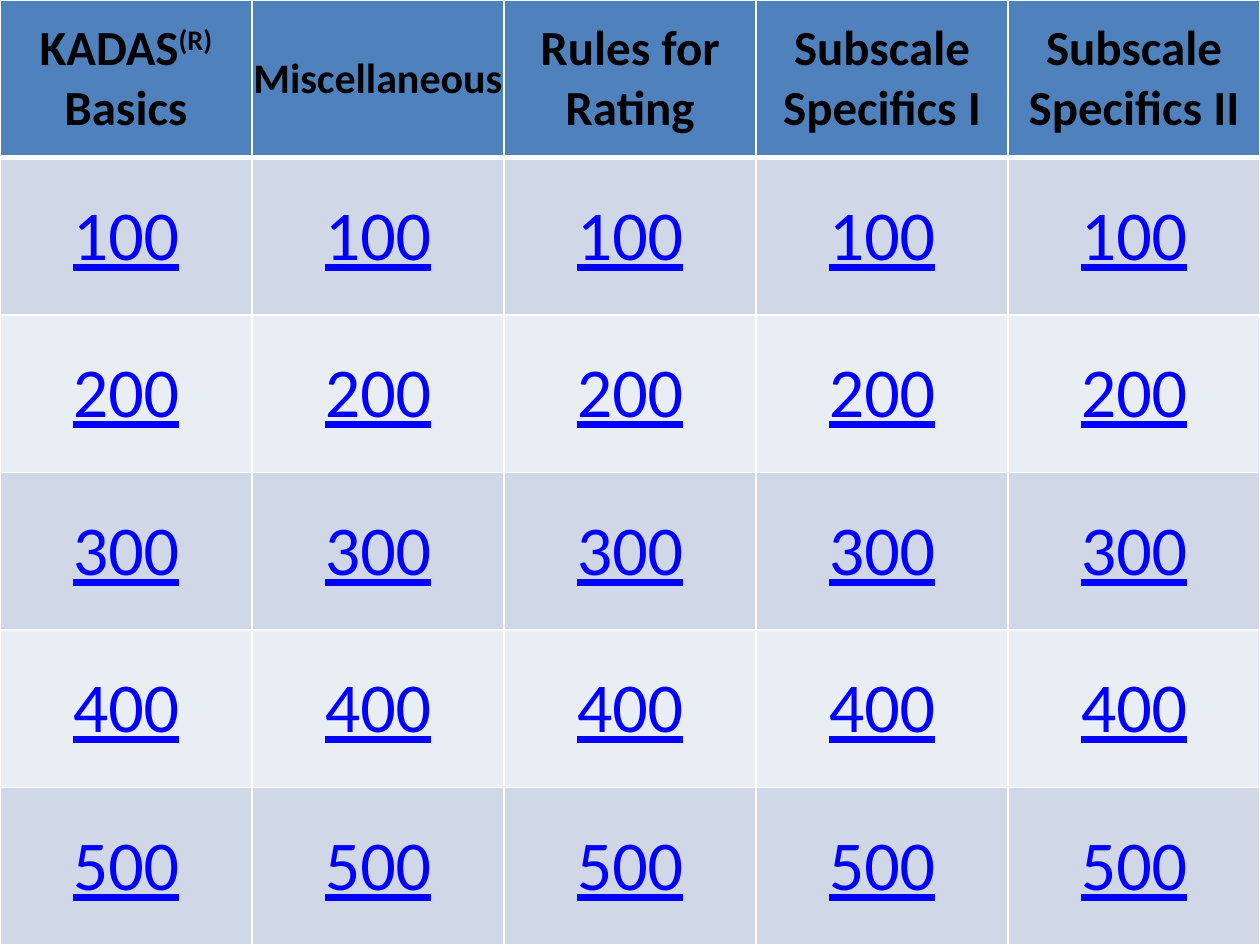
"""Build a quiz board slide: five categories with five point values each."""
from dataclasses import dataclass

from lxml import etree
from pptx import Presentation
from pptx.dml.color import RGBColor
from pptx.enum.text import MSO_ANCHOR, PP_ALIGN
from pptx.oxml import parse_xml
from pptx.oxml.ns import nsdecls, qn
from pptx.util import Pt

CENTER = PP_ALIGN.CENTER
MIDDLE = MSO_ANCHOR.MIDDLE


@dataclass(frozen=True)
class Theme:
    font: str = "Calibri"
    header_fill: str = "4F81BD"
    band_fills: tuple = ("D0D8E8", "E9EDF4")
    header_text: str = "000000"
    value_text: str = "0000FF"
    border: str = "FFFFFF"
    background: tuple = ("FFFBE5", "B0AA8B")
    header_size: int = 28
    small_header_size: int = 24
    value_size: int = 40
    thin_line: int = 1
    thick_line: int = 3


theme = Theme()
WIDTH, HEIGHT = 720, 540
CATEGORIES = [
    [("KADAS", 0), ("(R)", 30000), (" Basics", 0)],
    [("Miscellaneous", 0)],
    [("Rules for Rating", 0)],
    [("Subscale Specifics I", 0)],
    [("Subscale Specifics II", 0)],
]
VALUES = [100, 200, 300, 400, 500]


def style_cell(cell, fill, top, bottom):
    properties = cell._tc.get_or_add_tcPr()
    borders = {"lnL": theme.thin_line, "lnR": theme.thin_line, "lnT": top, "lnB": bottom}
    for tag, width in borders.items():
        properties.append(parse_xml(
            f'<a:{tag} {nsdecls("a")} w="{Pt(width)}"><a:solidFill>'
            f'<a:srgbClr val="{theme.border}"/></a:solidFill></a:{tag}>'))
    cell.fill.solid()
    cell.fill.fore_color.rgb = RGBColor.from_string(fill)
    cell.vertical_anchor = MIDDLE
    cell.text_frame.paragraphs[0].alignment = CENTER


def add_run(cell, text, size, color):
    run = cell.text_frame.paragraphs[0].add_run()
    run.text = text
    run.font.name = theme.font
    run.font.size = Pt(size)
    run.font.color.rgb = RGBColor.from_string(color)
    return run


presentation = Presentation()
presentation.slide_width = Pt(WIDTH)
presentation.slide_height = Pt(HEIGHT)
slide = presentation.slides.add_slide(presentation.slide_layouts[6])

background_fill = slide.background.fill
background_fill.gradient()
for position, (stop, color) in enumerate(zip(background_fill.gradient_stops, theme.background)):
    stop.position = position
    stop.color.rgb = RGBColor.from_string(color)
gradient = next(slide.element.iter(qn("a:gradFill")))
gradient.remove(gradient.find(qn("a:lin")))
circle = etree.SubElement(gradient, qn("a:path"), {"path": "circle"})
etree.SubElement(circle, qn("a:fillToRect"), {side: "50000" for side in "ltrb"})

row_count, column_count = len(VALUES) + 1, len(CATEGORIES)
board = slide.shapes.add_table(row_count, column_count, 0, 0, Pt(WIDTH), Pt(HEIGHT)).table
for column in board.columns:
    column.width = Pt(WIDTH / column_count)
for row in board.rows:
    row.height = Pt(HEIGHT / row_count)

for column_index, category in enumerate(CATEGORIES):
    header = board.cell(0, column_index)
    style_cell(header, theme.header_fill, theme.thin_line, theme.thick_line)
    header.margin_left = header.margin_right = header.margin_top = header.margin_bottom = 0
    size = theme.small_header_size if category[0][0] == "Miscellaneous" else theme.header_size
    for text, baseline in category:
        run = add_run(header, text, size, theme.header_text)
        run.font.bold = True
        if baseline:
            run.font._element.set("baseline", str(baseline))

    for value_index, value in enumerate(VALUES):
        cell = board.cell(value_index + 1, column_index)
        top = theme.thin_line if value_index else theme.thick_line
        style_cell(cell, theme.band_fills[value_index % 2], top, theme.thin_line)
        run = add_run(cell, str(value), theme.value_size, theme.value_text)
        run.font.bold = False
        run.font.underline = True

presentation.save("out.pptx")
